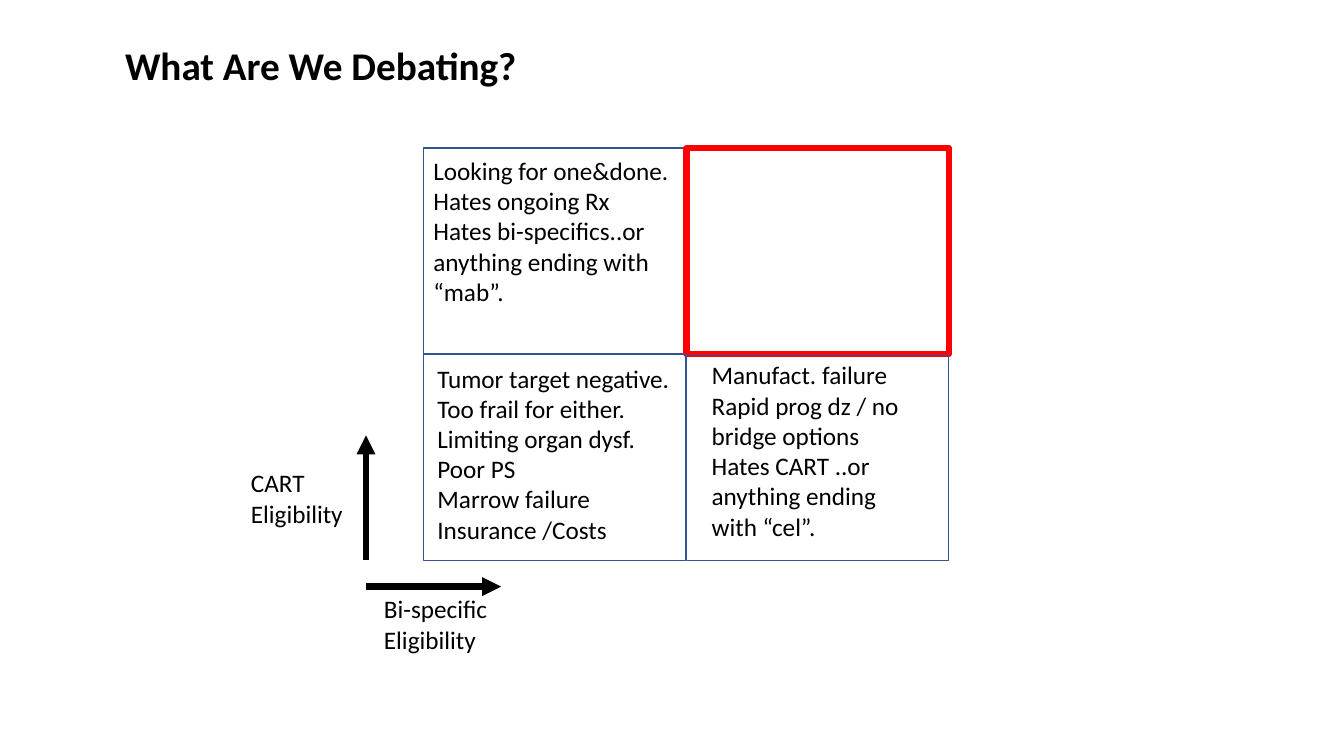
from dataclasses import dataclass

import pptx
import pptx.dml.color
import pptx.enum.shapes
import pptx.enum.text
import pptx.oxml.ns
import pptx.shapes.base
import pptx.slide
import pptx.text.text
import pptx.util
from lxml import etree

EMU_PER_PX = 9144  # 100 px to the inch


@dataclass(frozen=True)
class Theme:
    font: str = "Calibri"
    ink: str = "000000"
    grid_line: str = "325491"
    highlight: str = "FF0000"
    title_size: int = 28
    text_size: int = 18
    thin: float = 1
    thick: float = 4.5


@dataclass(frozen=True)
class Quadrant:
    column: int
    row: int
    highlighted: bool = False


@dataclass(frozen=True)
class Label:
    left: int
    top: int
    width: int
    height: int
    lines: tuple[str, ...]


@dataclass(frozen=True)
class Arrow:
    start: tuple[int, int]
    end: tuple[int, int]


THEME = Theme()
GRID_LEFT, GRID_TOP = 420, 147
CELL_WIDTH, CELL_HEIGHT, CELL_GAP = 260, 204, 1

QUADRANTS = (
    Quadrant(0, 0),
    Quadrant(1, 0, highlighted=True),
    Quadrant(1, 1),
    Quadrant(0, 1),
)
ARROWS = (
    Arrow((363, 556), (363, 432)),
    Arrow((363, 582), (497, 582)),
)
TITLE = Label(114, 36, 482, 57, ("What Are We Debating?",))
LABELS = (
    Label(239, 459, 117, 71, ("CART", "Eligibility")),
    Label(371, 584, 126, 71, ("Bi-specific", "Eligibility")),
    Label(424, 355, 260, 192, (
        "Tumor target negative.", "Too frail for either.", "Limiting organ dysf.",
        "Poor PS", "Marrow failure", "Insurance /Costs")),
    Label(696, 352, 230, 192, (
        "Manufact. failure", "Rapid prog dz / no bridge options",
        "Hates CART ..or anything ending with “cel”.")),
    Label(420, 149, 264, 162, (
        "Looking for one&done.", "Hates ongoing Rx",
        "Hates bi-specifics..or anything ending with “mab”.")),
)


def px(length: int) -> pptx.util.Emu:
    return pptx.util.Emu(length * EMU_PER_PX)


def color(value: str) -> pptx.dml.color.RGBColor:
    return pptx.dml.color.RGBColor.from_string(value)


def write_text(frame: pptx.text.text.TextFrame, lines: tuple[str, ...], *,
               size: int = THEME.text_size, bold: bool = False) -> None:
    frame.word_wrap = True
    frame.auto_size = pptx.enum.text.MSO_AUTO_SIZE.NONE
    frame.vertical_anchor = pptx.enum.text.MSO_ANCHOR.TOP
    for index, line in enumerate(lines):
        para = frame.add_paragraph() if index else frame.paragraphs[0]
        para.alignment = pptx.enum.text.PP_ALIGN.LEFT
        span = para.add_run()
        span.text = line
        span.font.name = THEME.font
        span.font.size = pptx.util.Pt(size)
        span.font.bold = bold
        span.font.color.rgb = color(THEME.ink)


def place_title(page: pptx.slide.Slide, label: Label) -> None:
    title = page.shapes.title
    title.left, title.top = px(label.left), px(label.top)
    title.width, title.height = px(label.width), px(label.height)
    write_text(title.text_frame, label.lines, size=THEME.title_size, bold=True)


def draw_quadrant(page: pptx.slide.Slide, quadrant: Quadrant) -> None:
    box = page.shapes.add_shape(
        pptx.enum.shapes.MSO_SHAPE.RECTANGLE,
        px(GRID_LEFT + quadrant.column * (CELL_WIDTH + CELL_GAP)),
        px(GRID_TOP + quadrant.row * (CELL_HEIGHT + CELL_GAP)),
        px(CELL_WIDTH), px(CELL_HEIGHT))
    box.shadow.inherit = False
    box.fill.background()
    box.line.color.rgb = color(THEME.highlight if quadrant.highlighted else THEME.grid_line)
    box.line.width = pptx.util.Pt(THEME.thick if quadrant.highlighted else THEME.thin)


def draw_arrow(page: pptx.slide.Slide, arrow: Arrow) -> None:
    connector = page.shapes.add_connector(
        pptx.enum.shapes.MSO_CONNECTOR.STRAIGHT,
        *map(px, arrow.start), *map(px, arrow.end))
    connector.line.color.rgb = color(THEME.ink)
    connector.line.width = pptx.util.Pt(THEME.thick)
    qn = pptx.oxml.ns.qn
    properties = connector.element.spPr
    etree.SubElement(properties.find(qn("a:ln")), qn("a:tailEnd"), type="triangle")
    etree.SubElement(properties, qn("a:effectLst"))


def draw_label(page: pptx.slide.Slide, label: Label) -> None:
    box = page.shapes.add_textbox(
        px(label.left), px(label.top), px(label.width), px(label.height))
    write_text(box.text_frame, label.lines)


def main() -> None:
    deck = pptx.Presentation()
    deck.slide_width, deck.slide_height = px(1333), px(750)
    page = deck.slides.add_slide(deck.slide_layouts.get_by_name("Title Only"))

    # Heading
    place_title(page, TITLE)

    # Two-by-two eligibility grid
    for quadrant in QUADRANTS:
        draw_quadrant(page, quadrant)

    # Axis arrows
    for arrow in ARROWS:
        draw_arrow(page, arrow)

    # Axis names and quadrant notes
    for label in LABELS:
        draw_label(page, label)

    deck.save("out.pptx")


if __name__ == "__main__":
    main()
